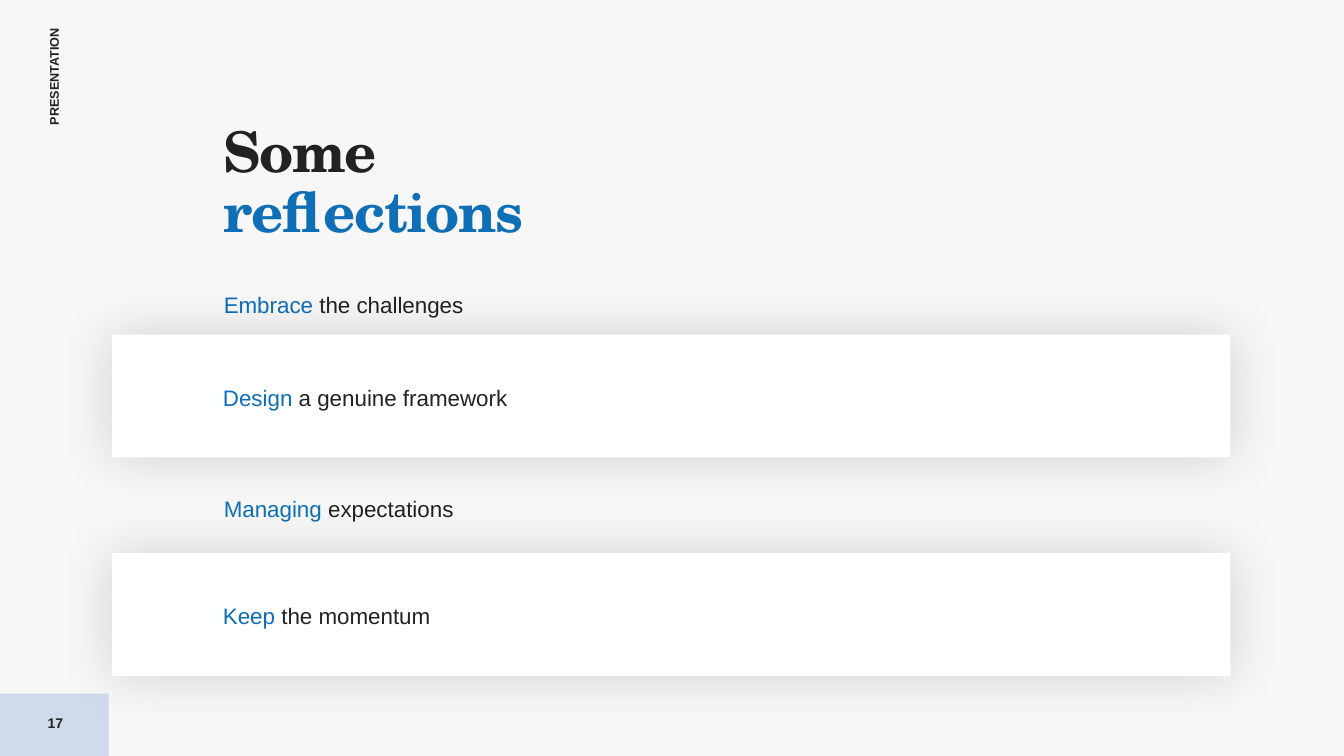
from dataclasses import dataclass

from lxml import etree
from pptx import Presentation
from pptx import util as u
from pptx.dml.color import RGBColor
from pptx.enum import shapes, text
from pptx.oxml.ns import qn

INK, BLUE = "222222", "0E6EB6"
PAPER, CARD, FOOTER = "F7F7F7", "FEFFFF", "CFDBEA"
TEXT_LEFT, TEXT_WIDTH = 5.64, 25.4
CARD_LEFT, CARD_WIDTH, CARD_HEIGHT = 2.82, 28.19, 3.1


@dataclass(frozen=True)
class Reflection:
    keyword: str
    rest: str
    top: float
    on_card: bool


REFLECTIONS = [
    Reflection("Managing ", "expectations", 12.4, False),
    Reflection("Embrace ", "the challenges", 7.27, False),
    Reflection("Keep ", "the momentum", 13.94, True),
    Reflection("Design ", "a genuine framework", 8.43, True),
]


def color(value: str) -> RGBColor:
    return RGBColor.from_string(value)


def add_run(paragraph, words: str, size: float, ink: str,
            face: str = "Arial", bold: bool = False):
    run = paragraph.add_run()
    run.text = words
    run.font.size, run.font.name, run.font.bold = u.Pt(size), face, bold
    run.font.color.rgb = color(ink)
    return run


def set_insets(frame, left: float = 0) -> None:
    frame.margin_left = u.Cm(left)
    frame.margin_top = frame.margin_right = frame.margin_bottom = 0


def add_box(slide, left: float, top: float, width: float, height: float):
    box = slide.shapes.add_textbox(u.Cm(left), u.Cm(top), u.Cm(width), u.Cm(height))
    box.text_frame.word_wrap = True
    return box


def add_panel(slide, left: float, top: float, width: float, height: float, fill: str):
    panel = slide.shapes.add_shape(shapes.MSO_SHAPE.RECTANGLE, u.Cm(left),
                                   u.Cm(top), u.Cm(width), u.Cm(height))
    panel.shadow.inherit = False
    panel.fill.solid()
    panel.fill.fore_color.rgb = color(fill)
    panel.line.fill.background()
    return panel


def add_glow_shadow(panel) -> None:
    effects = panel._element.spPr.find(qn("a:effectLst"))
    shadow = etree.SubElement(effects, qn("a:outerShdw"), blurRad=str(u.Pt(35.8)),
                              dist="0", dir=str(84 * 60000), algn="ctr", rotWithShape="0")
    black = etree.SubElement(shadow, qn("a:srgbClr"), val="000000")
    etree.SubElement(black, qn("a:alpha"), val="14000")


def add_title(slide) -> None:
    frame = add_box(slide, TEXT_LEFT, 3.12, TEXT_WIDTH, 3.4).text_frame
    set_insets(frame)
    title = frame.paragraphs[0]
    title.line_spacing = 0.9
    some = add_run(title, "Some", 40, INK, "TeX Gyre Schola", True)
    title.add_line_break()
    reflections = add_run(title, "reflections", 40, BLUE, "TeX Gyre Schola", True)
    for run in (some, reflections):
        run.font._element.set("spc", "-100")


def add_reflection(slide, item: Reflection) -> None:
    if item.on_card:
        holder = add_panel(slide, CARD_LEFT, item.top, CARD_WIDTH, CARD_HEIGHT, CARD)
        add_glow_shadow(holder)
        holder.text_frame.vertical_anchor = text.MSO_ANCHOR.MIDDLE
        set_insets(holder.text_frame, 2.8)
    else:
        holder = add_box(slide, TEXT_LEFT, item.top, TEXT_WIDTH, 1)
        set_insets(holder.text_frame)
    line = holder.text_frame.paragraphs[0]
    line.alignment = text.PP_ALIGN.LEFT
    line.line_spacing = 1.1
    add_run(line, item.keyword, 16, BLUE)
    add_run(line, item.rest, 16, INK)


def add_margin_labels(slide) -> None:
    add_panel(slide, 0, 17.48, 2.74, 1.57, FOOTER)

    section = add_box(slide, -0.15, 1.57, 3.02, 0.64)
    section.rotation = 270
    section.text_frame.word_wrap = False
    add_run(section.text_frame.paragraphs[0], "PRESENTATION", 9, INK, bold=True)

    page = add_box(slide, 0, 17.7, 2.79, 1.02).text_frame
    page.vertical_anchor = text.MSO_ANCHOR.MIDDLE
    page.paragraphs[0].alignment = text.PP_ALIGN.CENTER
    add_run(page.paragraphs[0], "17", 10, INK, bold=True)


def main() -> None:
    deck = Presentation()
    deck.slide_width, deck.slide_height = u.Cm(33.87), u.Cm(19.05)
    slide = deck.slides.add_slide(deck.slide_layouts[6])
    slide.background.fill.solid()
    slide.background.fill.fore_color.rgb = color(PAPER)

    # Section name and page number in the left margin
    add_margin_labels(slide)

    # Heading
    add_title(slide)

    # Reflections, alternating between plain lines and raised cards
    for item in REFLECTIONS:
        add_reflection(slide, item)

    deck.save("out.pptx")


if __name__ == "__main__":
    main()
